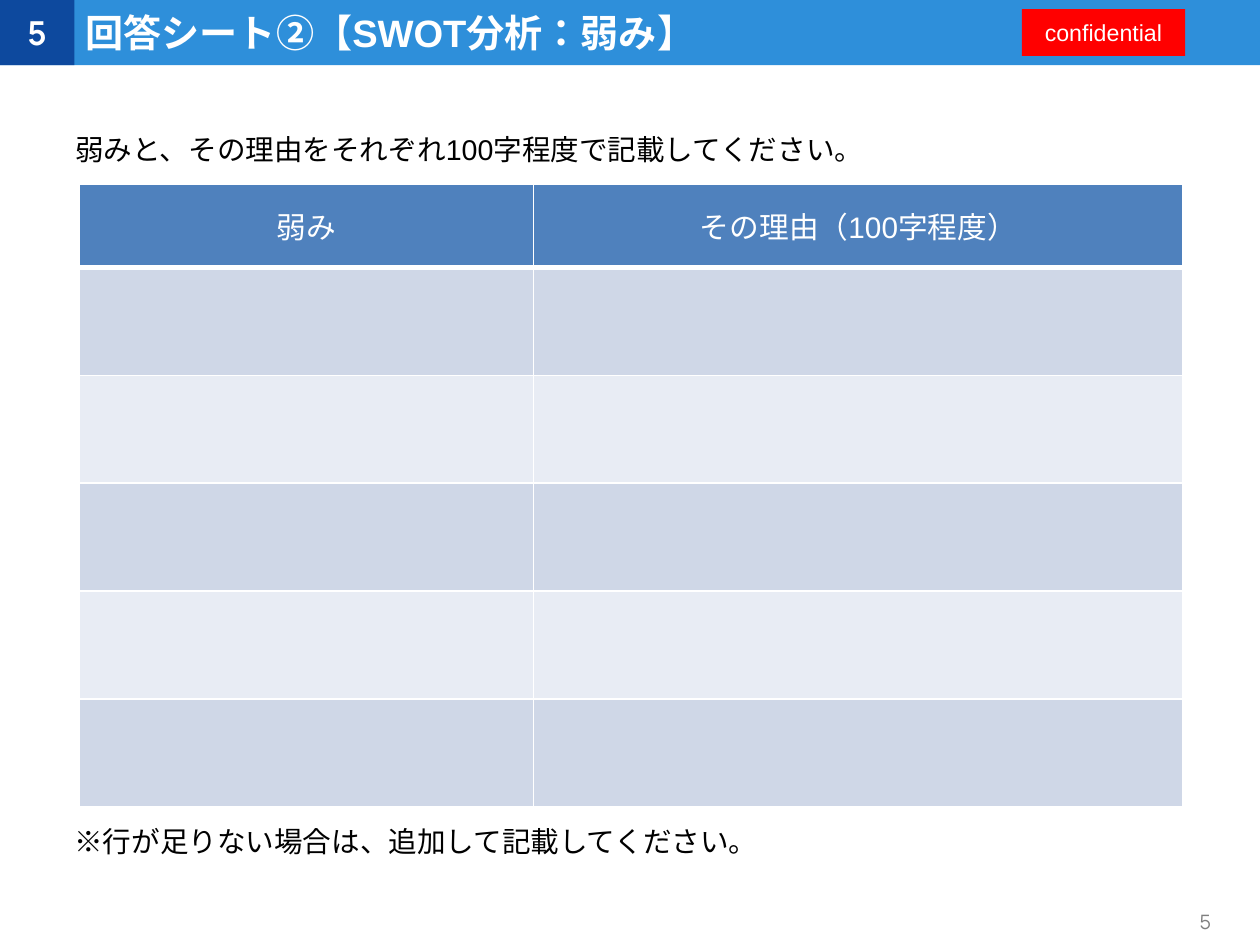
from dataclasses import dataclass

from lxml.etree import SubElement
from pptx import Presentation
from pptx.dml.color import RGBColor
from pptx.enum.lang import MSO_LANGUAGE_ID
from pptx.enum.shapes import MSO_SHAPE
from pptx.enum.text import MSO_ANCHOR, MSO_AUTO_SIZE, PP_ALIGN
from pptx.oxml.ns import qn
from pptx.slide import Slide
from pptx.table import _Cell
from pptx.text.text import TextFrame, _Paragraph
from pptx.util import Inches, Pt

CM_PER_INCH = 2.54
SLIDE_WIDTH = 28 / CM_PER_INCH
SLIDE_HEIGHT = 21 / CM_PER_INCH
WHITE = "FFFFFF"
BLACK = "000000"
HEADER_FILL = "4F81BD"
BAND_FILLS = ("CFD7E7", "E8ECF4")
HEADINGS = ("弱み", "その理由（100字程度）")
COLUMN_WIDTHS = (3.98, 5.68)
HEADER_HEIGHT = 0.73
ANSWER_COUNT = 5
ANSWER_HEIGHT = 4.72 / ANSWER_COUNT


@dataclass(frozen=True)
class Box:
    left: float
    top: float
    width: float
    height: float


@dataclass(frozen=True)
class Lettering:
    text: str
    size: float
    color: str = WHITE
    font: str = "Arial"
    bold: bool = False
    centered: bool = True


@dataclass(frozen=True)
class Panel:
    box: Box
    fill: str
    lettering: Lettering | None = None


@dataclass(frozen=True)
class Label:
    box: Box
    lettering: Lettering
    is_note: bool = False


PANELS = (
    Panel(Box(0, 0, SLIDE_WIDTH, 0.57), "2E8FDA"),
    Panel(Box(8.94, 0.08, 1.43, 0.41), "FF0000", Lettering("confidential", 14.6)),
    Panel(Box(0, 0, 0.65, 0.57), "0D499E", Lettering("5", 20.8, font="Manrope", bold=True)),
)
LABELS = (
    Label(Box(10.22, 7.78, 0.65, 0.57), Lettering("5", 12.5, "7F7F7F", "Manrope")),
    Label(
        Box(0.65, 0, 8.22, 0.57),
        Lettering("回答シート②【SWOT分析：弱み】", 24, bold=True, centered=False),
    ),
    Label(
        Box(0.66, 1, 9.72, 0.41),
        Lettering("弱みと、その理由をそれぞれ100字程度で記載してください。", 18, BLACK, centered=False),
        is_note=True,
    ),
    Label(
        Box(0.65, 7.06, 9.72, 0.41),
        Lettering("※行が足りない場合は、追加して記載してください。", 18, BLACK, centered=False),
        is_note=True,
    ),
)


def rgb(color: str) -> RGBColor:
    return RGBColor.from_string(color)


def write(frame: TextFrame, lettering: Lettering) -> _Paragraph:
    paragraph = frame.paragraphs[0]
    paragraph.alignment = PP_ALIGN.CENTER if lettering.centered else PP_ALIGN.LEFT
    run = paragraph.add_run()
    run.text = lettering.text
    run.font.size = Pt(lettering.size)
    run.font.name = lettering.font
    run.font.bold = lettering.bold
    run.font.color.rgb = rgb(lettering.color)
    run.font.language_id = MSO_LANGUAGE_ID.JAPANESE
    return paragraph


def place(box: Box) -> tuple[int, int, int, int]:
    return Inches(box.left), Inches(box.top), Inches(box.width), Inches(box.height)


def draw_panel(slide: Slide, panel: Panel) -> None:
    shape = slide.shapes.add_shape(MSO_SHAPE.RECTANGLE, *place(panel.box))
    shape.shadow.inherit = False
    shape.fill.solid()
    shape.fill.fore_color.rgb = rgb(panel.fill)
    shape.line.fill.background()
    if panel.lettering:
        shape.text_frame.vertical_anchor = MSO_ANCHOR.MIDDLE
        write(shape.text_frame, panel.lettering)


def draw_label(slide: Slide, label: Label) -> None:
    frame = slide.shapes.add_textbox(*place(label.box)).text_frame
    frame.word_wrap = True
    paragraph = write(frame, label.lettering)
    if label.is_note:
        frame.margin_left = frame.margin_right = 0
        frame.margin_top = frame.margin_bottom = 0
        frame.auto_size = MSO_AUTO_SIZE.SHAPE_TO_FIT_TEXT
        paragraph.line_spacing = 1.5
    else:
        frame.vertical_anchor = MSO_ANCHOR.MIDDLE


def style_cell(cell: _Cell, fill: str, top: float, bottom: float) -> None:
    properties = cell._tc.get_or_add_tcPr()
    for side, width in (("L", 1), ("R", 1), ("T", top), ("B", bottom)):
        border = SubElement(properties, qn(f"a:ln{side}"), w=str(Pt(width)))
        SubElement(SubElement(border, qn("a:solidFill")), qn("a:srgbClr"), val=WHITE)
    cell.fill.solid()
    cell.fill.fore_color.rgb = rgb(fill)
    cell.vertical_anchor = MSO_ANCHOR.MIDDLE
    cell.margin_left = cell.margin_right = Inches(0.1)
    cell.margin_top = cell.margin_bottom = Inches(0.05)


def draw_answer_table(slide: Slide) -> None:
    heights = (HEADER_HEIGHT, *[ANSWER_HEIGHT] * ANSWER_COUNT)
    box = Box(0.69, 1.61, sum(COLUMN_WIDTHS), sum(heights))
    table = slide.shapes.add_table(len(heights), len(COLUMN_WIDTHS), *place(box)).table
    for column, width in zip(table.columns, COLUMN_WIDTHS):
        column.width = Inches(width)
    for index, (row, height) in enumerate(zip(table.rows, heights)):
        row.height = Inches(height)
        fill = BAND_FILLS[(index - 1) % 2] if index else HEADER_FILL
        for cell in row.cells:
            style_cell(cell, fill, 3 if index == 1 else 1, 3 if index == 0 else 1)
    for cell, heading in zip(table.rows[0].cells, HEADINGS):
        write(cell.text_frame, Lettering(heading, 18.7))


def main() -> None:
    presentation = Presentation()
    presentation.slide_width = Inches(SLIDE_WIDTH)
    presentation.slide_height = Inches(SLIDE_HEIGHT)
    slide = presentation.slides.add_slide(presentation.slide_layouts[6])
    for panel in PANELS:
        draw_panel(slide, panel)
    draw_answer_table(slide)
    for label in LABELS:
        draw_label(slide, label)
    presentation.save("out.pptx")


if __name__ == "__main__":
    main()
